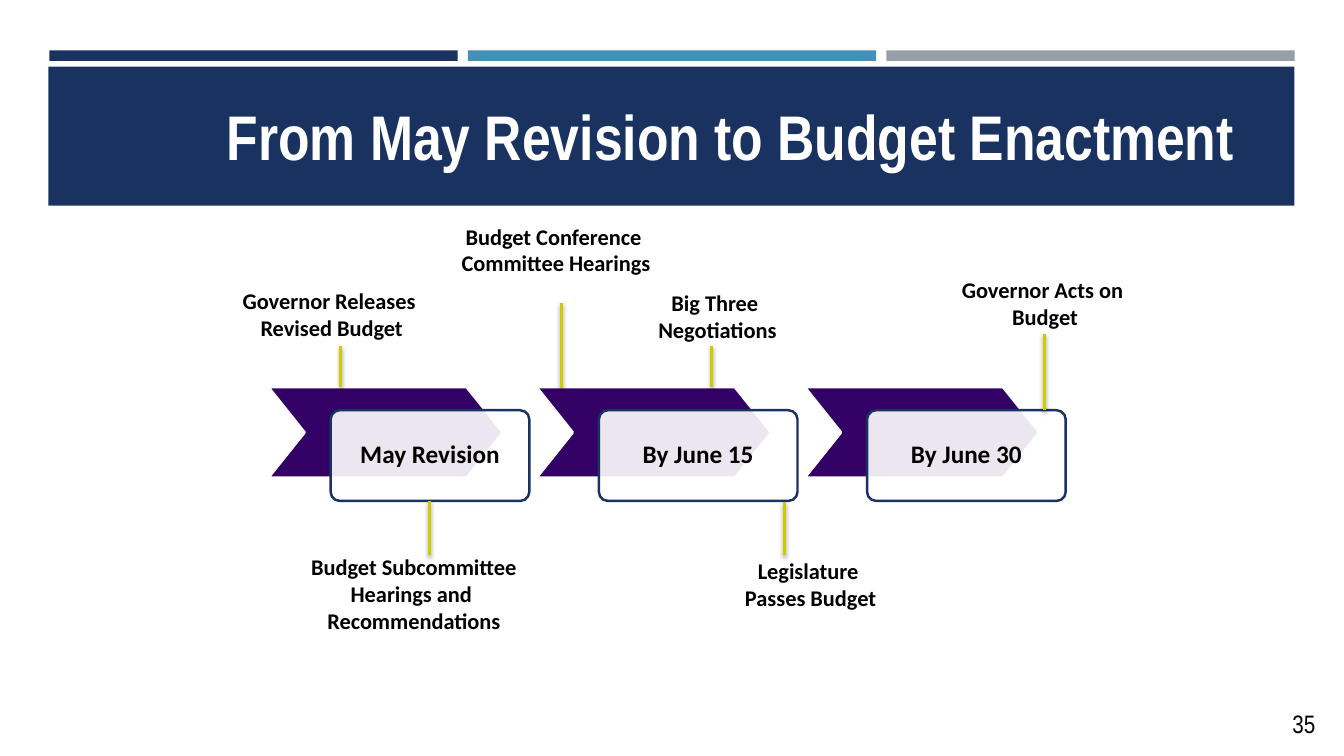
from dataclasses import dataclass

from lxml.etree import SubElement
from pptx import Presentation
from pptx.dml.color import RGBColor
from pptx.enum.shapes import MSO_CONNECTOR, MSO_SHAPE
from pptx.enum.text import MSO_ANCHOR, MSO_AUTO_SIZE, PP_ALIGN
from pptx.oxml.ns import qn
from pptx.util import Inches, Pt


@dataclass(frozen=True)
class Theme:
    navy: str = "1A3260"
    blue: str = "4590B8"
    grey: str = "969FA7"
    purple: str = "330066"
    yellow: str = "CCCC00"
    white: str = "FFFFFF"
    black: str = "000000"
    heading_font: str = "Arial Narrow"
    body_font: str = "Calibri"
    title_size: float = 45
    stage_size: float = 18
    label_size: float = 16
    number_size: float = 18


THEME = Theme()
CELL = 0.1


@dataclass(frozen=True)
class Box:
    column: float
    row: float
    columns: float
    rows: float

    def inner(self, column, row, columns, rows):
        return Box(self.column + column, self.row + row, columns, rows)

    def lengths(self):
        return [Inches(cells * CELL) for cells in (self.column, self.row, self.columns, self.rows)]


@dataclass(frozen=True)
class Milestone:
    lines: tuple
    label: tuple
    marker: tuple
    filled: bool = True


STAGES = ("May Revision", "By June 15", "By June 30")
STAGE_STEP = 26.6
MILESTONES = (
    Milestone(("Budget Subcommittee", "Hearings and ", "Recommendations"),
              (8.1, 34.4, 25.9, 9.1), (22.6, 29.7, 35.1), False),
    Milestone(("Budget Conference ", "Committee Hearings"),
              (21.2, 1.6, 27.9, 6.4), (35.7, 10.1, 18.5)),
    Milestone(("Big Three ", "Negotiations"),
              (42.4, 8.2, 17.5, 6.4), (50.6, 14.3, 18.4)),
    Milestone(("Legislature ", "Passes Budget"),
              (50, 34.8, 20.8, 6.4), (57.8, 29.8, 35.1), False),
    Milestone(("Governor Acts on ", "Budget"),
              (73.9, 6.9, 19.5, 6.4), (83.6, 13.1, 20.7)),
    Milestone(("Governor Releases ", "Revised Budget"),
              (1.5, 8, 22.8, 6.4), (13.8, 14.3, 18.4)),
)


def color(code):
    return RGBColor.from_string(code)


def add_block(page, box, fill, kind=MSO_SHAPE.RECTANGLE, line=None, width=0, corner=None):
    shape = page.shapes.add_shape(kind, *box.lengths())
    shape.shadow.inherit = False
    shape.fill.solid()
    shape.fill.fore_color.rgb = color(fill)
    if line:
        shape.line.color.rgb = color(line)
        shape.line.width = Pt(width)
    else:
        shape.line.fill.background()
    if corner is not None:
        shape.adjustments[0] = corner
    return shape


def write(shape, lines, size, font=THEME.body_font, ink=THEME.black, bold=True,
          align=PP_ALIGN.CENTER, inset=0.05, spacing=None, **frame_format):
    frame = shape.text_frame
    settings = {"word_wrap": True, "vertical_anchor": MSO_ANCHOR.TOP, **frame_format}
    for side in ("left", "right", "top", "bottom"):
        settings.setdefault(f"margin_{side}", Inches(inset))
    for name, value in settings.items():
        setattr(frame, name, value)
    for index, line in enumerate(lines):
        para = frame.add_paragraph() if index else frame.paragraphs[0]
        para.alignment = align
        para.line_spacing = spacing
        span = para.add_run()
        span.text = line
        for name, value in {"size": Pt(size), "name": font, "bold": bold}.items():
            setattr(span.font, name, value)
        span.font.color.rgb = color(ink)


def draw_header(page, box):
    for index, fill in enumerate((THEME.navy, THEME.blue, THEME.grey)):
        add_block(page, box.inner(0.1 + index * 41.5, 0, 40.5, 1.05), fill)
    add_block(page, box.inner(0, 1.6, box.columns, 13.8), THEME.navy)
    title = page.shapes.add_textbox(*box.inner(13.2, 3, 108.9, 10.8).lengths())
    write(title, ["From May Revision to Budget Enactment"], THEME.title_size,
          THEME.heading_font, THEME.white, vertical_anchor=MSO_ANCHOR.MIDDLE)


def draw_stage(page, box, text):
    add_block(page, box.inner(0, 0, 23.3, 9), THEME.purple, MSO_SHAPE.CHEVRON,
              THEME.white, 2, 0.4)
    card = add_block(page, box.inner(6.2, 2.3, 19.7, 9), THEME.white,
                     MSO_SHAPE.ROUNDED_RECTANGLE, THEME.navy, 1.75, 0.1)
    tint = card._element.spPr.find(qn("a:solidFill"))[0]
    SubElement(tint, qn("a:alpha"), val="90000")
    write(card, [text], THEME.stage_size, inset=0.14, spacing=0.9,
          vertical_anchor=MSO_ANCHOR.MIDDLE)


def draw_marker(page, box):
    left, top, _, height = box.lengths()
    marker = page.shapes.add_connector(MSO_CONNECTOR.STRAIGHT, left, top, left, top + height)
    marker.line.color.rgb = color(THEME.yellow)
    marker.line.width = Pt(2)
    effects = SubElement(marker._element.spPr, qn("a:effectLst"))
    shadow = SubElement(effects, qn("a:outerShdw"), blurRad=str(Pt(3)), dist=str(Pt(1.6)),
                        dir="5400000", rotWithShape="0")
    shade = SubElement(shadow, qn("a:srgbClr"), val=THEME.black)
    SubElement(shade, qn("a:alpha"), val="38000")


def draw_milestone(page, box, milestone):
    label_box = box.inner(*milestone.label)
    if milestone.filled:
        label = add_block(page, label_box, THEME.white)
    else:
        label = page.shapes.add_textbox(*label_box.lengths())
    write(label, milestone.lines, THEME.label_size, auto_size=MSO_AUTO_SIZE.SHAPE_TO_FIT_TEXT)
    column, start, end = milestone.marker
    draw_marker(page, box.inner(column, start, 0, end - start))


def draw_timeline(page, box):
    for index, text in enumerate(STAGES):
        draw_stage(page, box.inner(6.6 + index * STAGE_STEP, 18.4, 25.9, 11.3), text)
    for milestone in MILESTONES:
        draw_milestone(page, box, milestone)


def draw_page_number(page, box):
    number = page.shapes.add_textbox(*box.lengths())
    write(number, ["35"], THEME.number_size, THEME.heading_font, bold=False,
          align=PP_ALIGN.LEFT, inset=0.1, word_wrap=False,
          margin_top=Inches(0.05), margin_bottom=Inches(0.05),
          auto_size=MSO_AUTO_SIZE.SHAPE_TO_FIT_TEXT)


def main():
    deck = Presentation()
    deck.slide_width, deck.slide_height = Inches(13.33), Inches(7.5)
    page = deck.slides.add_slide(deck.slide_layouts[6])
    draw_header(page, Box(4.8, 5, 123.6, 15.4))
    draw_timeline(page, Box(20, 20, 94, 44))
    draw_page_number(page, Box(127.2, 69.8, 4.3, 4))
    deck.save("out.pptx")


if __name__ == "__main__":
    main()
